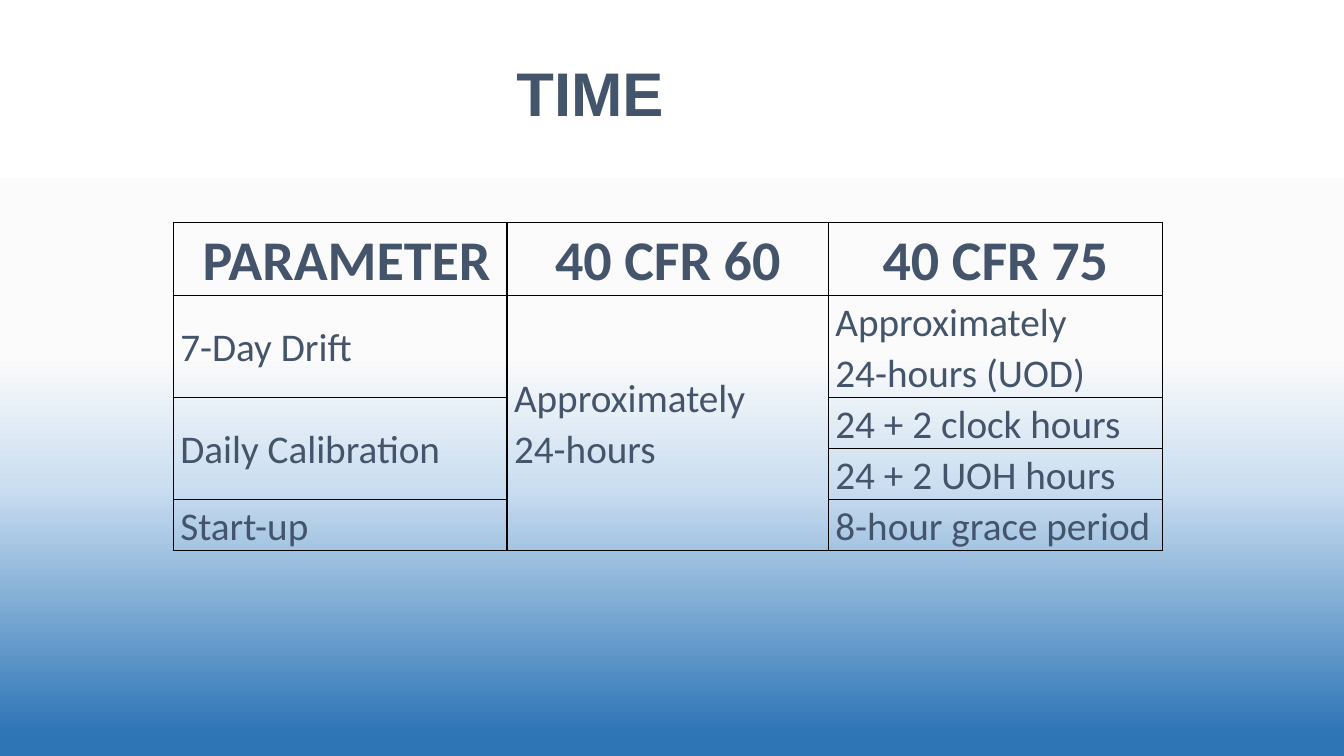
import pptx
import pptx.util
import pptx.dml.color
import pptx.enum.text
import pptx.oxml
import pptx.oxml.ns

Pt = pptx.util.Pt
ALIGN = pptx.enum.text.PP_ALIGN
ANCHOR = pptx.enum.text.MSO_ANCHOR
NS = pptx.oxml.ns.nsdecls("a")
HUES = {
    "text": "44546A",
    "line": "000000",
    "top": "FFFFFF",
    "pale": "FBFBFB",
    "sky": "CCDFF1",
    "deep": "2E75B6",
}


class Page:
    def __init__(self, slide):
        self.slide = slide
        self.pad = 5

    def back(self, stops):
        fill = self.slide.background.fill
        fill.gradient()
        fill.gradient_angle = 270
        group = self.slide._element.find(".//" + pptx.oxml.ns.qn("a:gsLst"))
        for old in list(group):
            group.remove(old)
        for place, hue in stops:
            group.append(pptx.oxml.parse_xml(
                f'<a:gs {NS} pos="{place * 1000}">'
                f'<a:srgbClr val="{HUES[hue]}"/></a:gs>'))

    def text(self, frame, lines, size, face, bold, align, space):
        for spot, line in enumerate(lines):
            para = frame.add_paragraph() if spot else frame.paragraphs[0]
            para.alignment = align
            para.line_spacing = space
            run = para.add_run()
            run.text = line
            run.font.size = Pt(size)
            run.font.name = face
            run.font.bold = bold
            run.font.color.rgb = pptx.dml.color.RGBColor.from_string(HUES["text"])

    def title(self, text, left, top, width, height):
        box = self.slide.shapes.add_textbox(Pt(left), Pt(top), Pt(width), Pt(height))
        frame = box.text_frame
        frame.word_wrap = True
        frame.vertical_anchor = ANCHOR.MIDDLE
        self.text(frame, [text], 44, "Arial", True, ALIGN.CENTER, 0.9)

    def edge(self, cell):
        props = cell._tc.get_or_add_tcPr()
        for spot, side in enumerate("LRTB"):
            props.insert(spot, pptx.oxml.parse_xml(
                f'<a:ln{side} {NS} w="{Pt(1)}"><a:solidFill>'
                f'<a:srgbClr val="{HUES["line"]}"/></a:solidFill></a:ln{side}>'))

    def table(self, left, top, cols, rows, heads, body, spans):
        grid = self.slide.shapes.add_table(
            len(rows), len(cols), Pt(left), Pt(top), Pt(sum(cols)), Pt(sum(rows))).table
        grid.first_row = False
        grid.horz_banding = False
        for col, width in zip(grid.columns, cols):
            col.width = Pt(width)
        for row, height in zip(grid.rows, rows):
            row.height = Pt(height)
        for cell in grid.iter_cells():
            cell.fill.background()
            cell.margin_left = cell.margin_right = Pt(self.pad)
            cell.margin_top = cell.margin_bottom = 0
            self.edge(cell)
        for first, last in spans:
            grid.cell(*first).merge(grid.cell(*last))
        for spot, head in enumerate(heads):
            self.text(grid.cell(0, spot).text_frame, [head],
                      40, "Calibri", True, ALIGN.CENTER, 1.07)
        for (row, col), lines in body.items():
            cell = grid.cell(row, col)
            cell.vertical_anchor = ANCHOR.MIDDLE
            self.text(cell.text_frame, lines, 28, "Calibri", False, ALIGN.LEFT, 1.07)
        return grid


def main():
    deck = pptx.Presentation()
    deck.slide_width = Pt(960)
    deck.slide_height = Pt(540)
    page = Page(deck.slides.add_slide(deck.slide_layouts[6]))
    page.back([(0, "top"), (47, "pale"), (64, "sky"), (97, "deep")])
    page.title("TIME", 51, 36, 741, 65.5)
    body = {
        (1, 0): ["7-Day Drift"],
        (2, 0): ["Daily Calibration"],
        (4, 0): ["Start-up"],
        (1, 1): ["Approximately", "24-hours"],
        (1, 2): ["Approximately", "24-hours (UOD)"],
        (2, 2): ["24 + 2 clock hours"],
        (3, 2): ["24 + 2 UOH hours"],
        (4, 2): ["8-hour grace period"],
    }
    grid = page.table(
        123.8, 159, [238.4, 229.6, 238.4], [52, 73, 36.5, 36.5, 36.5],
        ["PARAMETER", "40 CFR 60", "40 CFR 75"], body,
        [((1, 1), (4, 1)), ((2, 0), (3, 0))])
    grid.cell(0, 0).margin_left = Pt(14)
    deck.save("out.pptx")


if __name__ == "__main__":
    main()
